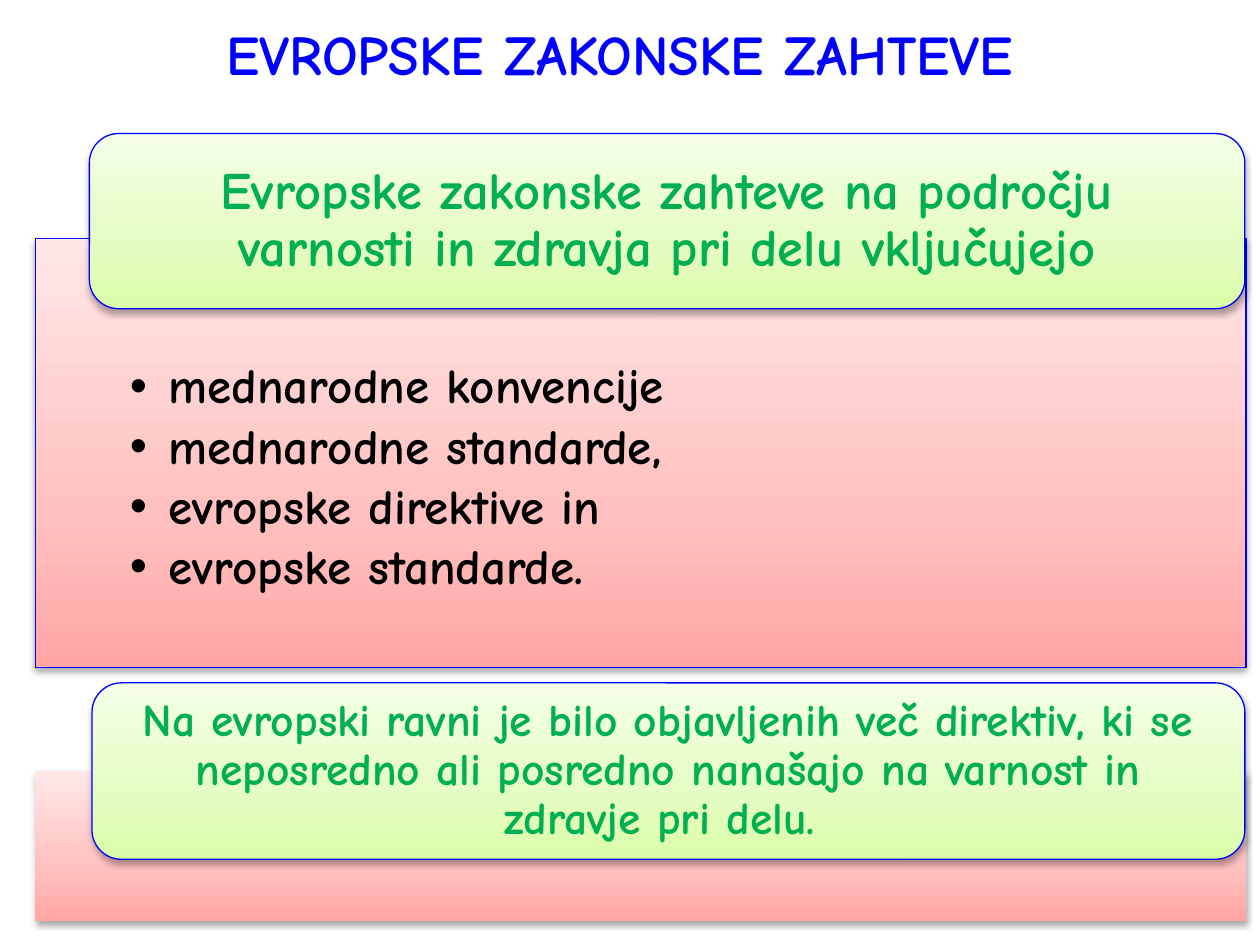
from lxml.etree import SubElement
from pptx import Presentation
from pptx.dml.color import RGBColor
from pptx.enum.shapes import MSO_SHAPE
from pptx.enum.text import MSO_ANCHOR, PP_ALIGN
from pptx.oxml import parse_xml
from pptx.oxml.ns import nsdecls, qn
from pptx.util import Inches, Pt

FONT = "Comic Neue"
BLUE, GREEN, BLACK = "0000FF", "00B050", "000000"
PINK_STOPS = [(0, "FFA6A5"), (35, "FFC0BF"), (100, "FFE7E7")]
LIME_STOPS = [(0, "DAFDA7"), (35, "E4FCC2"), (100, "F5FFE7")]

TITLE = "EVROPSKE ZAKONSKE ZAHTEVE "
SECTIONS = [
    {
        "heading": "Evropske zakonske zahteve na področju varnosti in zdravja pri delu vključujejo",
        "size": 30,
        "card": (0.71, 1.06, 9.17, 1.39),
        "panel": (0.28, 1.89, 9.61, 3.41),
        "outline": BLUE,
        "items": [
            "mednarodne konvencije",
            "mednarodne standarde,",
            "evropske direktive in",
            "evropske standarde.",
        ],
    },
    {
        "heading": "Na evropski ravni je bilo objavljenih več direktiv, ki se "
                   "neposredno ali posredno nanašajo na varnost in zdravje pri delu. ",
        "size": 26,
        "card": (0.73, 5.42, 9.15, 1.4),
        "panel": (0.28, 6.12, 9.61, 1.19),
        "outline": None,
        "items": [],
    },
]


def color(value):
    return RGBColor.from_string(value)


def add_gradient(shape, stops):
    shape.fill.gradient()
    shape.fill.gradient_angle = 90
    stop_list = shape.fill._fill._gradFill.find(qn("a:gsLst"))
    for stop in list(stop_list):
        stop_list.remove(stop)
    for position, value in stops:
        stop = SubElement(stop_list, qn("a:gs"), pos=str(position * 1000))
        SubElement(stop, qn("a:srgbClr"), val=value)


def add_shadow(shape):
    shape._element.spPr.append(parse_xml(
        f'<a:effectLst {nsdecls("a")}><a:outerShdw blurRad="{Pt(3.5)}" dist="{Pt(2.2)}" '
        'dir="5400000" rotWithShape="0"><a:srgbClr val="000000"><a:alpha val="32000"/>'
        '</a:srgbClr></a:outerShdw></a:effectLst>'))


def add_block(page, kind, place, stops, outline):
    shape = page.shapes.add_shape(kind, *map(Inches, place))
    add_gradient(shape, stops)
    if outline:
        shape.line.color.rgb = color(outline)
        shape.line.width = Pt(0.75)
    else:
        shape.line.fill.background()
    add_shadow(shape)
    return shape


def set_insets(frame, left, top, right, bottom):
    frame.margin_left, frame.margin_top = Inches(left), Inches(top)
    frame.margin_right, frame.margin_bottom = Inches(right), Inches(bottom)


def write(frame, text, size, value, align, spacing):
    frame.word_wrap = True
    frame.text = text
    for para in frame.paragraphs:
        para.alignment = align
        para.line_spacing = spacing
        for span in para.runs:
            span.font.name = FONT
            span.font.size = Pt(size)
            span.font.bold = True
            span.font.color.rgb = color(value)


def add_bullets(frame, indent):
    for para in frame.paragraphs:
        para.space_after = Pt(4.2)
        properties = para._p.get_or_add_pPr()
        properties.set("marL", str(Inches(indent)))
        properties.set("indent", str(-Inches(indent)))
        SubElement(properties, qn("a:buFont"), typeface="Arial")
        SubElement(properties, qn("a:buChar"), char="•")


def add_section(page, section):
    panel = add_block(page, MSO_SHAPE.RECTANGLE, section["panel"], PINK_STOPS, section["outline"])
    if section["items"]:
        frame = panel.text_frame
        frame.vertical_anchor = MSO_ANCHOR.TOP
        set_insets(frame, 0.75, 0.98, 0.75, 0.22)
        write(frame, "\n".join(section["items"]), 28, BLACK, PP_ALIGN.LEFT, 0.9)
        add_bullets(frame, 0.31)
    card = add_block(page, MSO_SHAPE.ROUNDED_RECTANGLE, section["card"], LIME_STOPS, BLUE)
    frame = card.text_frame
    frame.vertical_anchor = MSO_ANCHOR.MIDDLE
    set_insets(frame, 0.25, 0, 0.25, 0)
    write(frame, section["heading"], section["size"], GREEN, PP_ALIGN.CENTER, 0.9)


def main():
    deck = Presentation()
    deck.slide_width, deck.slide_height = Inches(10), Inches(7.5)
    page = deck.slides.add_slide(deck.slide_layouts[6])
    box = page.shapes.add_textbox(0, Inches(0.21), deck.slide_width, Inches(0.6))
    write(box.text_frame, TITLE, 32, BLUE, PP_ALIGN.CENTER, 0.8)
    for section in SECTIONS:
        add_section(page, section)
    deck.save("out.pptx")


if __name__ == "__main__":
    main()
